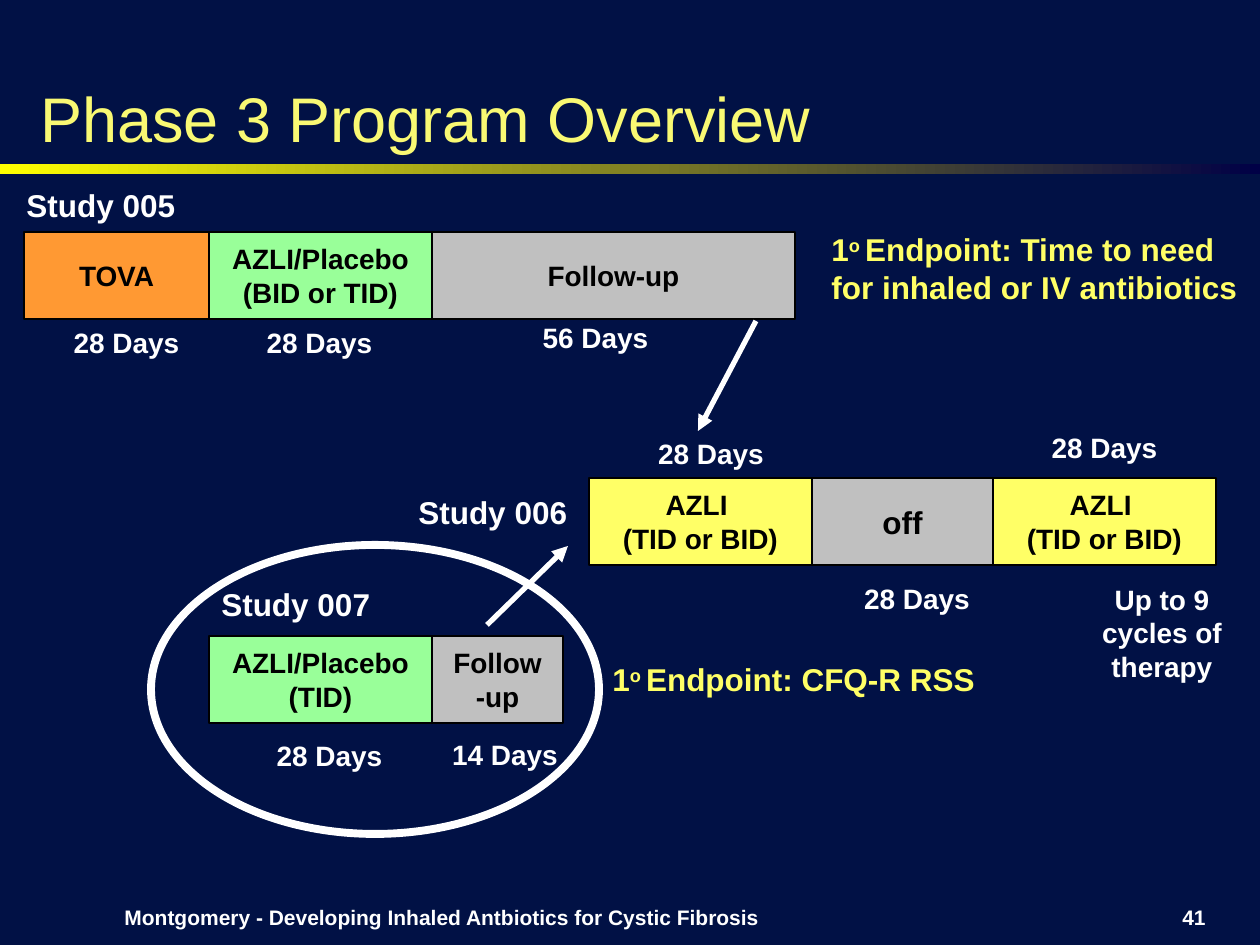
import pptx
import pptx.util
import pptx.dml.color
import pptx.enum.shapes
import pptx.enum.text
import pptx.oxml
import pptx.oxml.ns

RGBColor = pptx.dml.color.RGBColor
Align = pptx.enum.text.PP_ALIGN
Anchor = pptx.enum.text.MSO_ANCHOR
Shape = pptx.enum.shapes.MSO_SHAPE

NAVY = RGBColor(0x01, 0x11, 0x45)
WHITE = RGBColor(0xFF, 0xFF, 0xFF)
BLACK = RGBColor(0x00, 0x00, 0x00)
TITLE_YELLOW = RGBColor(0xF9, 0xF9, 0x73)
YELLOW = RGBColor(0xFF, 0xFF, 0x66)
ORANGE = RGBColor(0xFF, 0x99, 0x33)
GREEN = RGBColor(0x99, 0xFF, 0x99)
GRAY = RGBColor(0xC0, 0xC0, 0xC0)
RULE_START = RGBColor(0xFF, 0xFF, 0x00)
RULE_END = RGBColor(0x00, 0x00, 0x46)

EMU_PER_PX = 914400 // 126


def px(length):
    return pptx.util.Emu(length * EMU_PER_PX)


class Painter:
    font = "Arial"

    def __init__(self, page):
        self.page = page

    def format_spans(self, para, size, color, bold=True):
        for span in para.runs:
            span.font.name = self.font
            span.font.size = pptx.util.Pt(size)
            span.font.bold = bold
            span.font.color.rgb = color

    def shape(self, kind, left, top, width, height):
        shape = self.page.shapes.add_shape(kind, px(left), px(top), px(width), px(height))
        shape.shadow.inherit = False
        return shape

    def rule(self, left, top, width, height):
        rule = self.shape(Shape.RECTANGLE, left, top, width, height)
        rule.line.fill.background()
        rule.fill.gradient()
        rule.fill.gradient_angle = 0
        for stop, color in zip(rule.fill.gradient_stops, (RULE_START, RULE_END)):
            stop.color.rgb = color

    def text(self, left, top, width, height, words, size=16, color=WHITE,
             align=Align.CENTER, anchor=Anchor.TOP, bold=True):
        box = self.page.shapes.add_textbox(px(left), px(top), px(width), px(height))
        frame = box.text_frame
        frame.word_wrap = True
        frame.vertical_anchor = anchor
        para = frame.paragraphs[0]
        para.text = words
        para.alignment = align
        self.format_spans(para, size, color, bold)
        return para

    def endpoint(self, left, top, width, height, words):
        para = self.text(left, top, width, height, "1", 18, YELLOW, Align.LEFT)
        degree = para.add_run()
        degree.text = "o "
        degree._r.get_or_add_rPr().set("baseline", "30000")
        para.add_run().text = words
        self.format_spans(para, 18, YELLOW)

    def bar(self, left, top, width, height, words, fill, size):
        bar = self.shape(Shape.RECTANGLE, left, top, width, height)
        bar.fill.solid()
        bar.fill.fore_color.rgb = fill
        bar.line.color.rgb = BLACK
        bar.line.width = pptx.util.Pt(0.75)
        frame = bar.text_frame
        frame.word_wrap = True
        frame.vertical_anchor = Anchor.MIDDLE
        frame.margin_left = frame.margin_right = px(9)
        frame.margin_top = frame.margin_bottom = px(4)
        para = frame.paragraphs[0]
        para.text = words
        para.alignment = Align.CENTER
        self.format_spans(para, size, BLACK)

    def timeline(self, left, top, segments):
        for width, words, fill, size in segments:
            self.bar(left, top, width, 87, words, fill, size)
            left += width

    def ring(self, left, top, width, height):
        ring = self.shape(Shape.OVAL, left, top, width, height)
        ring.fill.background()
        ring.line.color.rgb = WHITE
        ring.line.width = pptx.util.Pt(4.5)

    def arrow(self, x1, y1, x2, y2):
        arrow = self.page.shapes.add_connector(
            pptx.enum.shapes.MSO_CONNECTOR.STRAIGHT, px(x1), px(y1), px(x2), px(y2))
        arrow.line.color.rgb = WHITE
        arrow.line.width = pptx.util.Pt(3)
        namespace = pptx.oxml.ns.nsdecls("a")
        arrow.line._get_or_add_ln().append(
            pptx.oxml.parse_xml(f'<a:tailEnd {namespace} type="triangle"/>'))
        arrow._element.spPr.append(pptx.oxml.parse_xml(f"<a:effectLst {namespace}/>"))


def main():
    deck = pptx.Presentation()
    deck.slide_width, deck.slide_height = px(1260), px(945)
    page = deck.slides.add_slide(deck.slide_layouts[6])
    page.background.fill.solid()
    page.background.fill.fore_color.rgb = NAVY
    painter = Painter(page)

    # Title and rule
    painter.rule(0, 164, 1260, 10)
    painter.text(28, 87, 1198, 74, "Phase 3 Program Overview", 36, TITLE_YELLOW,
                 Align.LEFT, Anchor.BOTTOM, bold=False)

    # Study timelines
    painter.timeline(24, 232, [
        (185, "TOVA", ORANGE, 16),
        (223, "AZLI/Placebo (BID or TID)", GREEN, 16),
        (363, "Follow-up", GRAY, 16)])
    cycle = (223, "AZLI \n(TID or BID)", YELLOW, 16)
    painter.timeline(589, 478, [cycle, (181, "off", GRAY, 18), cycle])
    painter.timeline(209, 636, [
        (223, "AZLI/Placebo (TID)", GREEN, 16),
        (131, "Follow\n-up", GRAY, 16)])

    # Study names
    for left, top, width, name in [(14, 180, 309, "Study 005"),
                                   (406, 487, 208, "Study 006"),
                                   (209, 579, 291, "Study 007")]:
        painter.text(left, top, width, 50, name, 18, align=Align.LEFT)

    # Durations
    for left, top, width, days in [
            (53, 319, 147, 28), (246, 319, 147, 28), (433, 314, 325, 56),
            (626, 430, 170, 28), (835, 575, 164, 28), (1020, 424, 169, 28),
            (256, 732, 147, 28), (421, 731, 168, 14)]:
        painter.text(left, top, width, 47, f"{days} Days")
    painter.text(1080, 576, 164, 113, "Up to 9 cycles of therapy")

    # Primary endpoints
    painter.endpoint(819, 224, 445, 88, "Endpoint: Time to need for inhaled or IV antibiotics")
    painter.endpoint(600, 654, 517, 50, "Endpoint: CFQ-R RSS")

    # Highlight and flow into study 006
    painter.ring(151, 545, 448, 289)
    painter.arrow(756, 321, 698, 431)
    painter.arrow(487, 625, 568, 546)

    # Footer
    painter.text(42, 892, 800, 50,
                 "Montgomery - Developing Inhaled Antbiotics for Cystic Fibrosis",
                 12, anchor=Anchor.MIDDLE)
    painter.text(935, 892, 283, 50, "41", 12, align=Align.RIGHT, anchor=Anchor.MIDDLE)

    deck.save("out.pptx")


if __name__ == "__main__":
    main()
